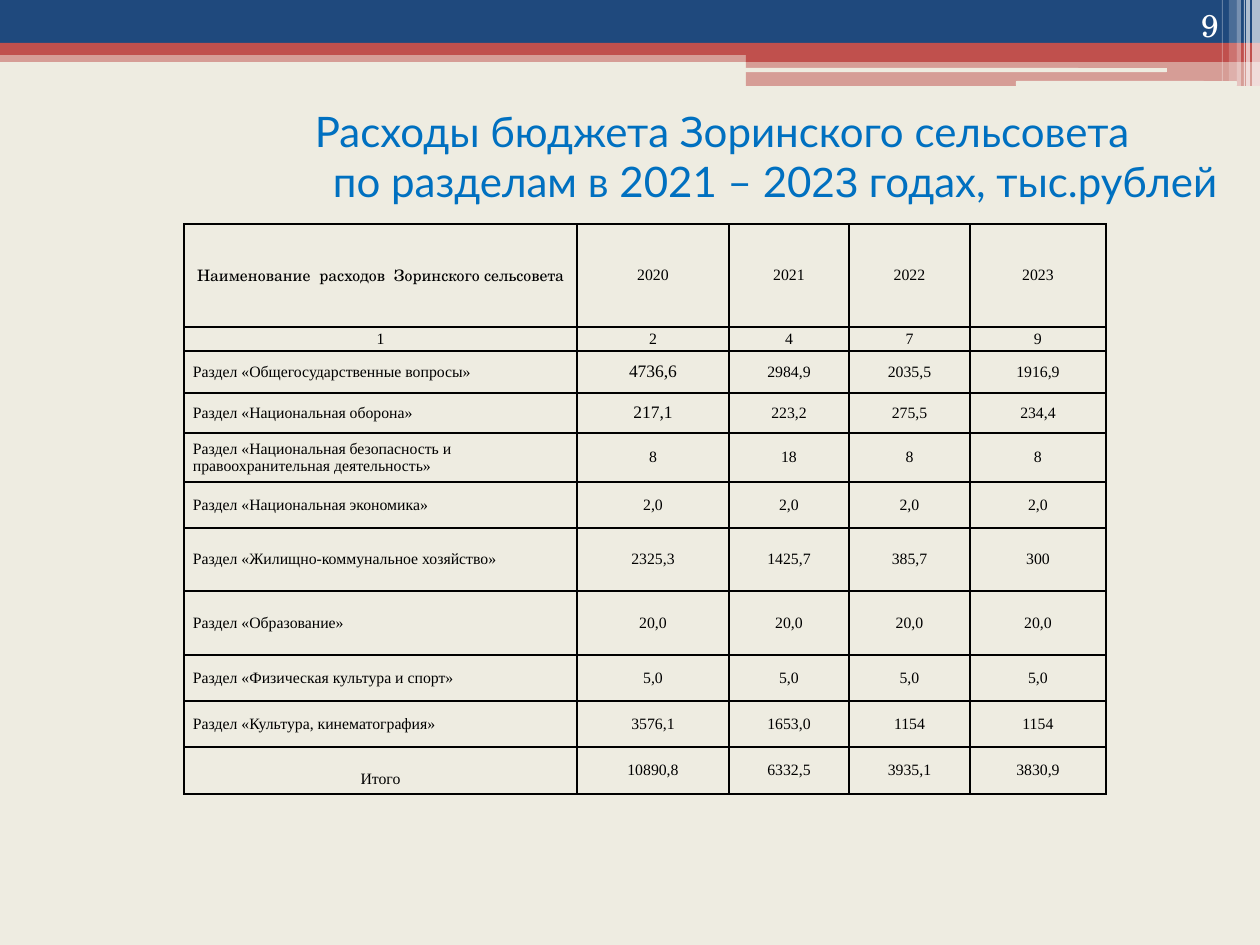
"""Builds the slide with the budget spending table of the Zorinsky village council."""
import dataclasses

import lxml.etree
import pptx
import pptx.dml.color
import pptx.enum.shapes
import pptx.enum.text
import pptx.oxml.ns
import pptx.util

SHAPES = pptx.enum.shapes.MSO_SHAPE
ALIGN = pptx.enum.text.PP_ALIGN
ANCHOR = pptx.enum.text.MSO_ANCHOR


@dataclasses.dataclass(frozen=True)
class Theme:
    paper: str = "EEECE1"
    navy: str = "1F497D"
    red: str = "C0504D"
    white: str = "FFFFFF"
    title: str = "0070C0"
    ink: str = "000000"
    title_font: str = "Lato"
    digits_font: str = "Arial"
    serif_font: str = "TeX Gyre Schola"
    body_font: str = "Times New Roman"
    title_size: int = 24
    number_size: int = 18
    large_size: int = 10
    body_size: int = 9
    border: int = 1


THEME = Theme()
EMU_PER_PX = 914400 / 126
SLIDE_SIZE = (1260, 945)

BANDS = [
    (SHAPES.RECTANGLE, (0, 50, 1260, 12), THEME.red, 50),
    (SHAPES.RECTANGLE, (0, 0, 1260, 43), THEME.navy, 100),
    (SHAPES.RECTANGLE, (0, 43, 1260, 12), THEME.red, 100),
    (SHAPES.RECTANGLE, (746, 49, 514, 13), THEME.red, 100),
    (SHAPES.RECTANGLE, (746, 61, 514, 25), THEME.red, 50),
    (SHAPES.ROUNDED_RECTANGLE, (745, 68, 422, 4), THEME.paper, 100),
    (SHAPES.ROUNDED_RECTANGLE, (1016, 81, 221, 5), THEME.paper, 100),
]
STRIPES = [
    (1252, 8, 86, 65), (1246, 4, 86, 65), (1244, 1, 86, 60),
    (1237, 4, 86, 40), (1229, 8, 81, 20), (1222, 1, 81, 30),
]

TITLE_BOX = (0, 106, 1260, 100)
TITLE_LINES = [
    (315, [("Расходы бюджета Зоринского сельсовета", THEME.title_font)]),
    (333, [("по разделам в 2021 – 20", THEME.title_font),
           ("23", THEME.digits_font),
           (" годах, тыс.рублей", THEME.title_font)]),
]
NUMBER_BOX = (1126, 0, 105, 50)
SLIDE_NUMBER = "9"

TABLE_CORNER = (184, 224)
COLUMN_WIDTHS = [393, 152, 120, 121, 136]
ROW_HEIGHTS = [103, 24, 42, 40, 49, 46, 63, 64, 46, 46, 47]
ROWS = [
    ("Наименование  расходов  Зоринского сельсовета", "2020", "2021", "2022", "2023"),
    ("1", "2", "4", "7", "9"),
    ("Раздел «Общегосударственные вопросы»", "4736,6", "2984,9", "2035,5", "1916,9"),
    ("Раздел «Национальная оборона»", "217,1", "223,2", "275,5", "234,4"),
    ("Раздел «Национальная безопасность и правоохранительная деятельность»",
     "8", "18", "8", "8"),
    ("Раздел «Национальная экономика»", "2,0", "2,0", "2,0", "2,0"),
    ("Раздел «Жилищно-коммунальное хозяйство»", "2325,3", "1425,7", "385,7", "300"),
    ("Раздел «Образование»", "20,0", "20,0", "20,0", "20,0"),
    ("Раздел «Физическая культура и спорт»", "5,0", "5,0", "5,0", "5,0"),
    ("Раздел «Культура, кинематография»", "3576,1", "1653,0", "1154", "1154"),
    ("Итого", "10890,8", "6332,5", "3935,1", "3830,9"),
]
LARGE_CELLS = {(2, 1), (3, 1)}
CELL_INSET = 9
TOTAL_LABEL_DROP = 17


def px(length):
    return pptx.util.Emu(round(length * EMU_PER_PX))


def rgb(color):
    return pptx.dml.color.RGBColor.from_string(color)


def add_child(parent, tag, **attributes):
    return lxml.etree.SubElement(parent, pptx.oxml.ns.qn(tag), attributes)


def add_run(paragraph, text, font, size, color):
    run = paragraph.add_run()
    run.text = text
    run.font.name = font
    run.font.size = pptx.util.Pt(size)
    run.font.color.rgb = rgb(color)


def add_band(slide, kind, box, color, opacity):
    shape = slide.shapes.add_shape(kind, *map(px, box))
    shape.shadow.inherit = False
    shape.line.fill.background()
    shape.fill.solid()
    shape.fill.fore_color.rgb = rgb(color)
    if opacity < 100:
        color_element = shape.fill._xPr.find(".//" + pptx.oxml.ns.qn("a:srgbClr"))
        add_child(color_element, "a:alpha", val=str(opacity * 1000))


def add_text_box(slide, box, anchor):
    frame = slide.shapes.add_textbox(*map(px, box)).text_frame
    frame.word_wrap = True
    frame.vertical_anchor = anchor
    return frame


def add_title(slide):
    frame = add_text_box(slide, TITLE_BOX, ANCHOR.MIDDLE)
    frame.margin_left = frame.margin_right = 0
    for index, (indent, runs) in enumerate(TITLE_LINES):
        paragraph = frame.add_paragraph() if index else frame.paragraphs[0]
        paragraph.alignment = ALIGN.LEFT
        paragraph._p.get_or_add_pPr().set("marL", str(px(indent)))
        for text, font in runs:
            add_run(paragraph, text, font, THEME.title_size, THEME.title)


def add_slide_number(slide):
    paragraph = add_text_box(slide, NUMBER_BOX, ANCHOR.BOTTOM).paragraphs[0]
    paragraph.alignment = ALIGN.RIGHT
    add_run(paragraph, SLIDE_NUMBER, THEME.serif_font, THEME.number_size, THEME.white)


def add_borders(cell):
    properties = cell._tc.get_or_add_tcPr()
    for side in ("a:lnL", "a:lnR", "a:lnT", "a:lnB"):
        line = add_child(properties, side, w=str(pptx.util.Pt(THEME.border)))
        add_child(add_child(line, "a:solidFill"), "a:srgbClr", val=THEME.ink)


def fill_cell(cell, text, row, column):
    add_borders(cell)
    cell.fill.background()
    cell.vertical_anchor = ANCHOR.MIDDLE
    cell.margin_left = cell.margin_right = px(CELL_INSET)
    is_total_label = row == len(ROWS) - 1 and column == 0
    cell.margin_top = px(TOTAL_LABEL_DROP if is_total_label else 0)
    cell.margin_bottom = 0
    is_section = column == 0 and 2 <= row < len(ROWS) - 1
    paragraph = cell.text_frame.paragraphs[0]
    paragraph.alignment = ALIGN.LEFT if is_section else ALIGN.CENTER
    font = THEME.serif_font if (row, column) == (0, 0) else THEME.body_font
    size = THEME.large_size if (row, column) in LARGE_CELLS else THEME.body_size
    add_run(paragraph, text, font, size, THEME.ink)


def add_spending_table(slide):
    box = (*TABLE_CORNER, sum(COLUMN_WIDTHS), sum(ROW_HEIGHTS))
    table = slide.shapes.add_table(len(ROWS), len(COLUMN_WIDTHS), *map(px, box)).table
    table.first_row = table.horz_banding = False
    for column, width in zip(table.columns, COLUMN_WIDTHS):
        column.width = px(width)
    for row, height in zip(table.rows, ROW_HEIGHTS):
        row.height = px(height)
    for row, texts in enumerate(ROWS):
        for column, text in enumerate(texts):
            fill_cell(table.cell(row, column), text, row, column)


def main():
    presentation = pptx.Presentation()
    presentation.slide_width, presentation.slide_height = map(px, SLIDE_SIZE)
    slide = presentation.slides.add_slide(presentation.slide_layouts[6])
    slide.background.fill.solid()
    slide.background.fill.fore_color.rgb = rgb(THEME.paper)
    for kind, box, color, opacity in BANDS:
        add_band(slide, kind, box, color, opacity)
    for left, width, height, opacity in STRIPES:
        add_band(slide, SHAPES.RECTANGLE, (left, 0, width, height), THEME.white, opacity)
    add_title(slide)
    add_slide_number(slide)
    add_spending_table(slide)
    presentation.save("out.pptx")


if __name__ == "__main__":
    main()
